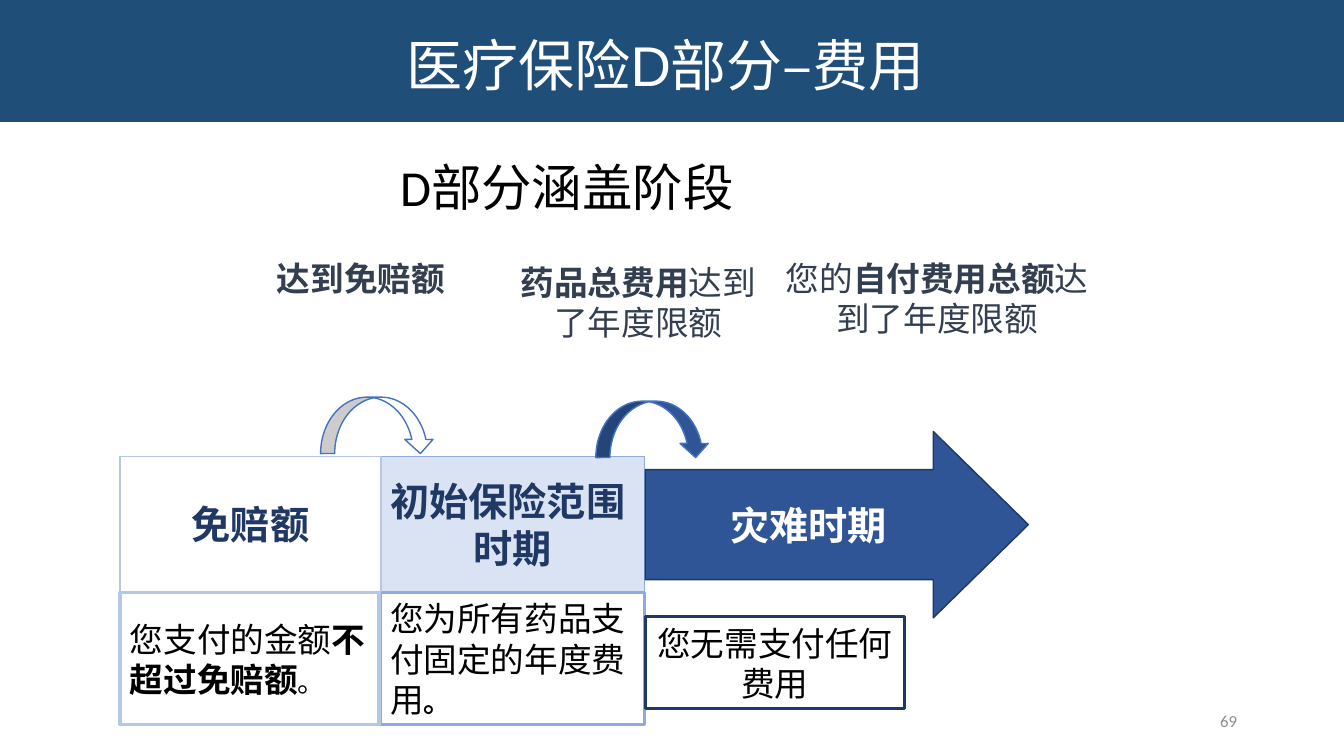
from pptx import Presentation
from pptx.dml.color import RGBColor
from pptx.enum.shapes import MSO_SHAPE
from pptx.enum.text import MSO_ANCHOR, MSO_AUTO_SIZE, PP_ALIGN
from pptx.util import Inches, Pt

LEFT, CENTER, RIGHT = PP_ALIGN.LEFT, PP_ALIGN.CENTER, PP_ALIGN.RIGHT
TOP, MIDDLE = MSO_ANCHOR.TOP, MSO_ANCHOR.MIDDLE
PROCESS, RECTANGLE = MSO_SHAPE.FLOWCHART_PROCESS, MSO_SHAPE.RECTANGLE
RIGHT_ARROW, CURVED_ARROW = MSO_SHAPE.RIGHT_ARROW, MSO_SHAPE.CURVED_DOWN_ARROW

NAVY, BLUE, WHITE, BLACK, SLATE = "203864", "2F5597", "FFFFFF", "000000", "333F50"
PALE, LIGHT, MEDIUM, ARROW_LINE = "DAE3F3", "B4C7E7", "8FAADC", "4472C4"

# Columns and rows of the stage diagram, in inches
COLUMNS = [1.19, 3.77, 6.4]
STAGE_TOP, DETAIL_TOP = 4.53, 5.88


def color(value):
    return RGBColor.from_string(value)


def write(shape, paragraphs, size, font_name, text_color, bold=False,
          align=CENTER, anchor=MIDDLE, wrap=True):
    """Each paragraph is a list of (text, run font settings)."""
    frame = shape.text_frame
    frame.word_wrap = wrap
    frame.auto_size = MSO_AUTO_SIZE.NONE
    frame.vertical_anchor = anchor
    for index, runs in enumerate(paragraphs):
        paragraph = frame.add_paragraph() if index else frame.paragraphs[0]
        paragraph.alignment = align
        paragraph.font.size = Pt(size)
        paragraph.font.name = font_name
        paragraph.font.bold = bold
        paragraph.font.color.rgb = color(text_color)
        for text, settings in runs:
            run = paragraph.add_run()
            run.text = text
            for name, value in settings.items():
                setattr(run.font, name, value)


presentation = Presentation()
presentation.slide_width = Inches(13.33)
presentation.slide_height = Inches(7.5)
slide = presentation.slides.add_slide(presentation.slide_layouts[5])

# Title banner
title = slide.shapes.title
title.left, title.top = 0, 0
title.width, title.height = presentation.slide_width, Inches(1.21)
title.fill.solid()
title.fill.fore_color.rgb = color("1F4E79")
write(title, [[("医疗保险D部分–费用 ", {})]], 40, "Arial", WHITE)
title.text_frame.margin_top = Inches(0.12)

# Stages, what each one costs, and the curved arrows between them
BOLD = {"bold": True}
STOP = {"size": Pt(20), "name": "Arial"}
stage_text = dict(size=28, font_name="Calibri", text_color=NAVY, bold=True)
detail_text = dict(size=24, font_name="Calibri", text_color=BLACK, align=LEFT)
blocks = [
    (PROCESS, (COLUMNS[1], STAGE_TOP, 2.62, 1.35), PALE, MEDIUM, 1,
     [[("初始保险范围 ", {})], [("时期", {})]], stage_text),
    (RIGHT_ARROW, (COLUMNS[2], 4.28, 3.8, 1.85), BLUE, NAVY, 1,
     [[("灾难时期", {})]], {**stage_text, "text_color": WHITE}),
    (RECTANGLE, (COLUMNS[1], DETAIL_TOP, 2.62, 1.31), None, MEDIUM, 2.25,
     [[("您为所有药品支付固定的年度费用", {}), ("。", {**STOP, **BOLD})]], detail_text),
    (RECTANGLE, (COLUMNS[2], 6.12, 2.57, 0.91), None, NAVY, 2.25,
     [[("您无需支付任何费用", {})]], {**detail_text, "align": CENTER}),
    (PROCESS, (COLUMNS[0], STAGE_TOP, 2.59, 1.34), WHITE, LIGHT, 1,
     [[("免赔额", {})]], stage_text),
    (RECTANGLE, (COLUMNS[0], DETAIL_TOP, 2.57, 1.31), None, LIGHT, 2.25,
     [[("您支付的金额", {}), ("不超过免赔额", BOLD), ("。", STOP)]], detail_text),
    (CURVED_ARROW, (3.18, 3.94, 1.13, 0.56), WHITE, ARROW_LINE, 1, [], stage_text),
    (CURVED_ARROW, (5.91, 3.98, 1.13, 0.56), BLUE, ARROW_LINE, 1, [], stage_text),
]
for kind, box, fill, line, line_width, paragraphs, style in blocks:
    shape = slide.shapes.add_shape(kind, *map(Inches, box))
    shape.shadow.inherit = False
    if fill:
        shape.fill.solid()
        shape.fill.fore_color.rgb = color(fill)
    else:
        shape.fill.background()
    shape.line.color.rgb = color(line)
    shape.line.width = Pt(line_width)
    if kind == RIGHT_ARROW:
        shape.adjustments[0], shape.adjustments[1] = 0.59, 0.51
    if paragraphs:
        write(shape, paragraphs, **style)

# Subtitle, conditions for moving between stages, and page number
condition_text = dict(size=24, font_name="Arial", text_color=SLATE, anchor=TOP)
labels = [
    ((3.87, 1.5, 5, 0.71), [("D部分涵盖阶段", {})],
     dict(size=36, font_name="Calibri", text_color=BLACK, align=LEFT,
          anchor=TOP, wrap=False)),
    ((2.37, 2.51, 2.42, 0.91), [("达到免赔额", BOLD)], condition_text),
    ((5.02, 2.55, 2.62, 1.31),
     [("药品总费用", BOLD), ("达到了年度限额", {})], condition_text),
    ((7.63, 2.51, 3.33, 1.31),
     [("您的", {}), ("自付费用总额", BOLD), ("达到了年度限额", {})], condition_text),
    ((9.37, 6.95, 3, 0.4), [("69", {})],
     dict(size=12, font_name="Calibri", text_color="8C8C8C", align=RIGHT)),
]
for box, runs, style in labels:
    text_box = slide.shapes.add_textbox(*map(Inches, box))
    write(text_box, [runs], **style)

presentation.save("out.pptx")
